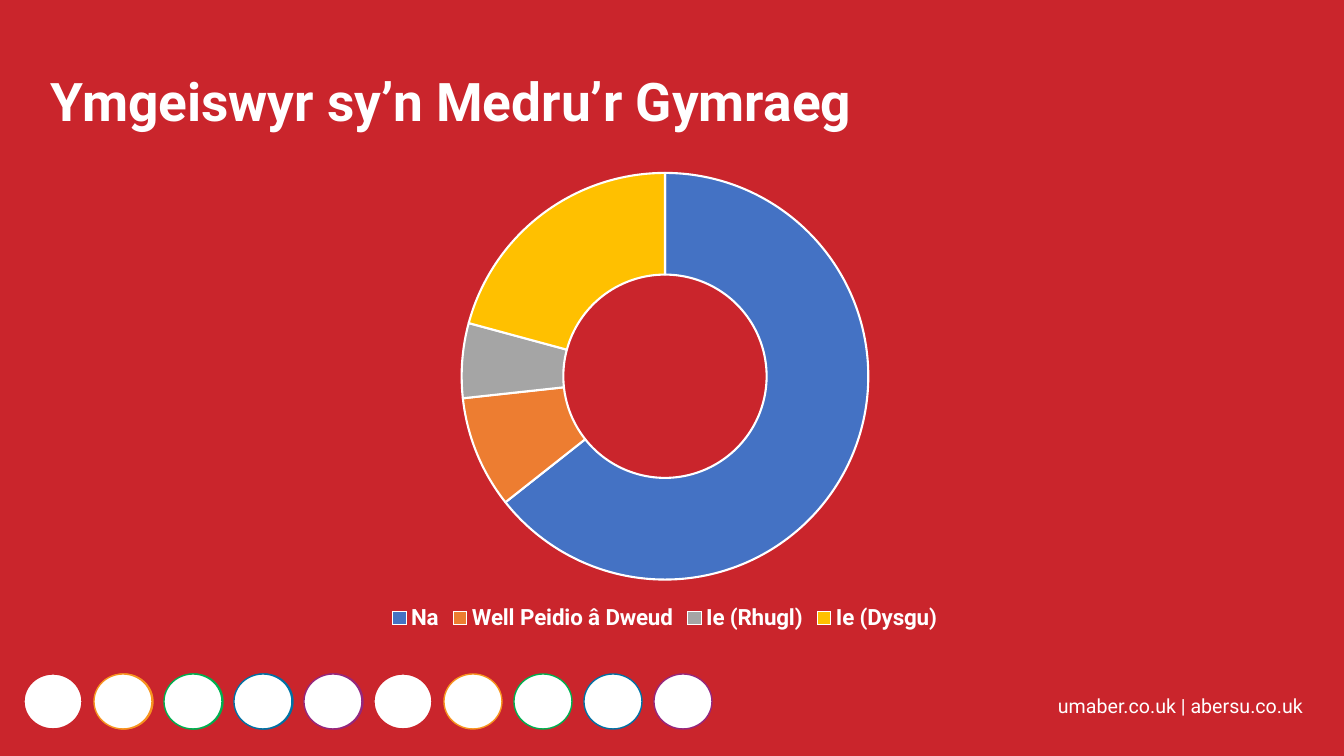
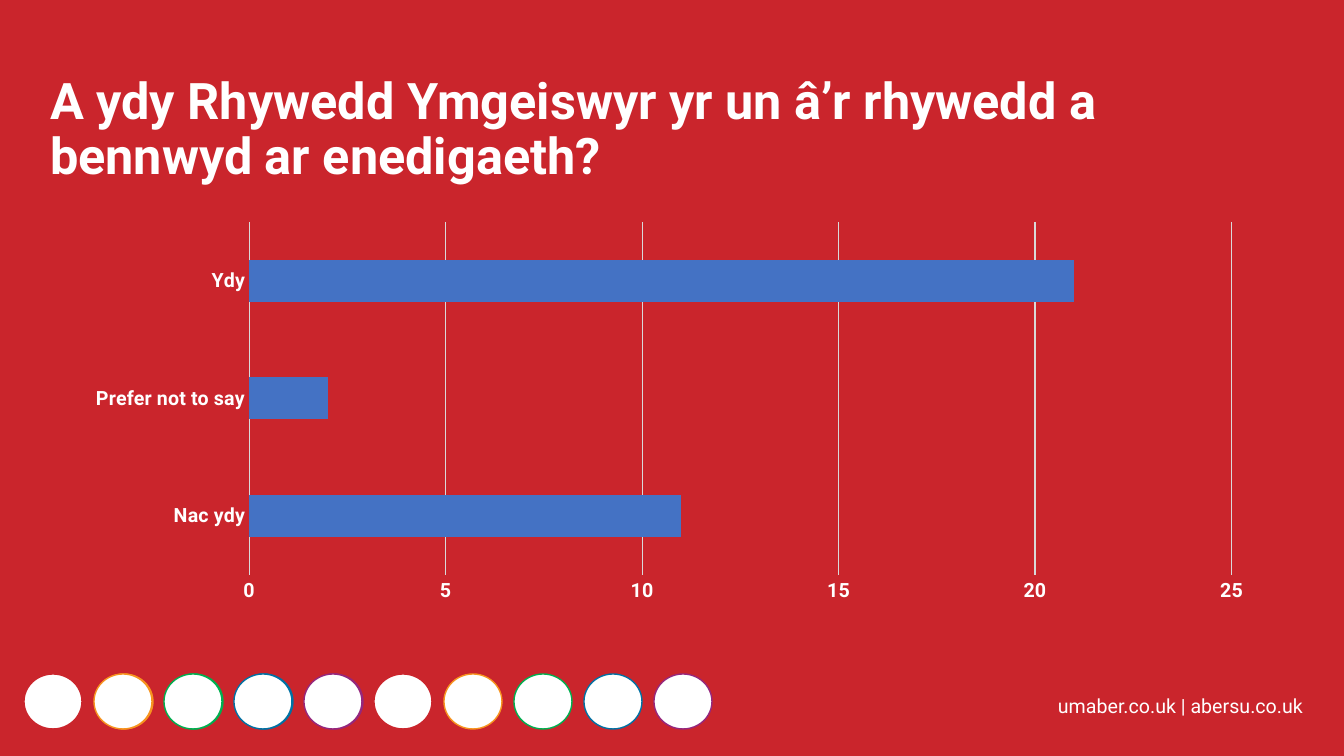
from dataclasses import dataclass

from pptx import Presentation
from pptx.chart.data import CategoryChartData
from pptx.dml.color import RGBColor
from pptx.enum.chart import XL_CHART_TYPE, XL_LEGEND_POSITION, XL_TICK_MARK
from pptx.enum.shapes import MSO_SHAPE
from pptx.enum.text import MSO_ANCHOR, MSO_AUTO_SIZE, PP_ALIGN
from pptx.oxml import parse_xml
from pptx.oxml.ns import nsdecls
from pptx.util import Emu, Pt


@dataclass(frozen=True)
class Theme:
    font: str = "Roboto"
    red: str = "CA252C"
    white: str = "FFFFFF"
    grid: str = "D9D9D9"
    rings: tuple = ("CA252C", "F7941F", "00AF50", "0171A3", "95277D")
    series: tuple = ("4472C4", "ED7D31", "A5A5A5", "FFC000")
    footer_size: int = 14
    legend_size: int = 16
    axis_size: int = 14


THEME = Theme()
SLIDE_WIDTH, SLIDE_HEIGHT = 1344, 756
EMU_PER_PX = 12192000 / SLIDE_WIDTH


def px(*lengths):
    """Turn pixel lengths into a list of EMU lengths."""
    return [Emu(round(length * EMU_PER_PX)) for length in lengths]


def set_font(font, size, bold=True):
    font.name = THEME.font
    font.size = Pt(size)
    font.bold = bold
    font.color.rgb = RGBColor.from_string(THEME.white)


deck = Presentation()
deck.slide_width, deck.slide_height = px(SLIDE_WIDTH, SLIDE_HEIGHT)
layout = deck.slide_layouts[5]
layout.background.fill.solid()
layout.background.fill.fore_color.rgb = RGBColor.from_string(THEME.red)

# Titles
titles = [
    ("Ymgeiswyr sy’n Medru’r Gymraeg", 38),
    ("A ydy Rhywedd Ymgeiswyr yr un â’r rhywedd a bennwyd ar enedigaeth?", 36),
]
for words, size in titles:
    title = deck.slides.add_slide(layout).shapes.title
    title.left, title.top, title.width, title.height = px(40, 71, 1151, 89)
    frame = title.text_frame
    frame.text = words
    frame.word_wrap = True
    frame.auto_size = MSO_AUTO_SIZE.NONE
    frame.vertical_anchor = MSO_ANCHOR.TOP
    para = frame.paragraphs[0]
    para.alignment = PP_ALIGN.LEFT
    para.line_spacing = 0.9
    set_font(para.runs[0].font, size)

language_slide, gender_slide = deck.slides

# Footer: made on a slide, then moved to the layout that both slides share
ring_pitch = 70
ring_rows = [(25, 5, True), (24, 10, False)]
footer_shapes = []
for first_left, count, filled in ring_rows:
    for index in range(count):
        ring_color = THEME.rings[index % len(THEME.rings)]
        ring = language_slide.shapes.add_shape(
            MSO_SHAPE.OVAL, *px(first_left + index * ring_pitch, 674, 58, 55))
        ring.shadow.inherit = False
        ring.fill.solid()
        ring.fill.fore_color.rgb = RGBColor.from_string(ring_color if filled else THEME.white)
        ring.line.color.rgb = RGBColor.from_string(ring_color)
        ring.line.width = Pt(1)
        footer_shapes.append(ring)

address_box = language_slide.shapes.add_textbox(*px(1048, 689, 282, 34))
address_box.text_frame.word_wrap = True
address_box.text_frame.text = "umaber.co.uk | abersu.co.uk"
set_font(address_box.text_frame.paragraphs[0].runs[0].font, THEME.footer_size, bold=False)
footer_shapes.append(address_box)

for shape in footer_shapes:
    layout.shapes.element.append(shape.element)

# Welsh speakers: doughnut
language_data = CategoryChartData()
language_data.categories = ["Na", "Well Peidio â Dweud", "Ie (Rhugl)", "Ie (Dysgu)"]
language_data.add_series("Series 1", [65, 9, 6, 21])
doughnut = language_slide.shapes.add_chart(
    XL_CHART_TYPE.DOUGHNUT, *px(40, 159, 1250, 476), language_data).chart
set_font(doughnut.font, THEME.legend_size)
doughnut.has_title = False
doughnut.has_legend = True
doughnut.legend.position = XL_LEGEND_POSITION.BOTTOM
doughnut.legend.include_in_layout = False
set_font(doughnut.legend.font, THEME.legend_size)
doughnut_plot = doughnut.plots[0]
doughnut_plot.vary_by_categories = True
for index, color in enumerate(THEME.series):
    slice_format = doughnut_plot.series[0].points[index].format
    slice_format.fill.solid()
    slice_format.fill.fore_color.rgb = RGBColor.from_string(color)
    slice_format.line.color.rgb = RGBColor.from_string(THEME.white)
    slice_format.line.width = Pt(1.5)
doughnut_xml = doughnut.element.xpath(".//c:doughnutChart")[0]
for hole in doughnut_xml.xpath("c:holeSize"):
    doughnut_xml.remove(hole)
doughnut_xml.append(parse_xml(f'<c:holeSize {nsdecls("c")} val="75"/>'))

# Gender at birth: bars
gender_data = CategoryChartData()
gender_data.categories = ["Nac ydy", "Prefer not to say", "Ydy"]
gender_data.add_series("Series 1", [11, 2, 21])
bars = gender_slide.shapes.add_chart(
    XL_CHART_TYPE.BAR_CLUSTERED, *px(72, 214, 1195, 397), gender_data).chart
set_font(bars.font, THEME.axis_size)
bars.has_title = False
bars.has_legend = False
bar_plot = bars.plots[0]
bar_plot.vary_by_categories = False
bar_plot.gap_width = 182
bar_fill = bar_plot.series[0].format.fill
bar_fill.solid()
bar_fill.fore_color.rgb = RGBColor.from_string(THEME.series[0])

for axis in (bars.category_axis, bars.value_axis):
    axis.major_tick_mark = XL_TICK_MARK.NONE
    axis.minor_tick_mark = XL_TICK_MARK.NONE
    set_font(axis.tick_labels.font, THEME.axis_size)
bars.value_axis.minimum_scale = 0
bars.value_axis.maximum_scale = 25
bars.value_axis.major_unit = 5
bars.value_axis.has_major_gridlines = True
bars.value_axis.format.line.fill.background()
for line in (bars.category_axis.format.line, bars.value_axis.major_gridlines.format.line):
    line.color.rgb = RGBColor.from_string(THEME.grid)
    line.width = Pt(0.75)

deck.save("out.pptx")
